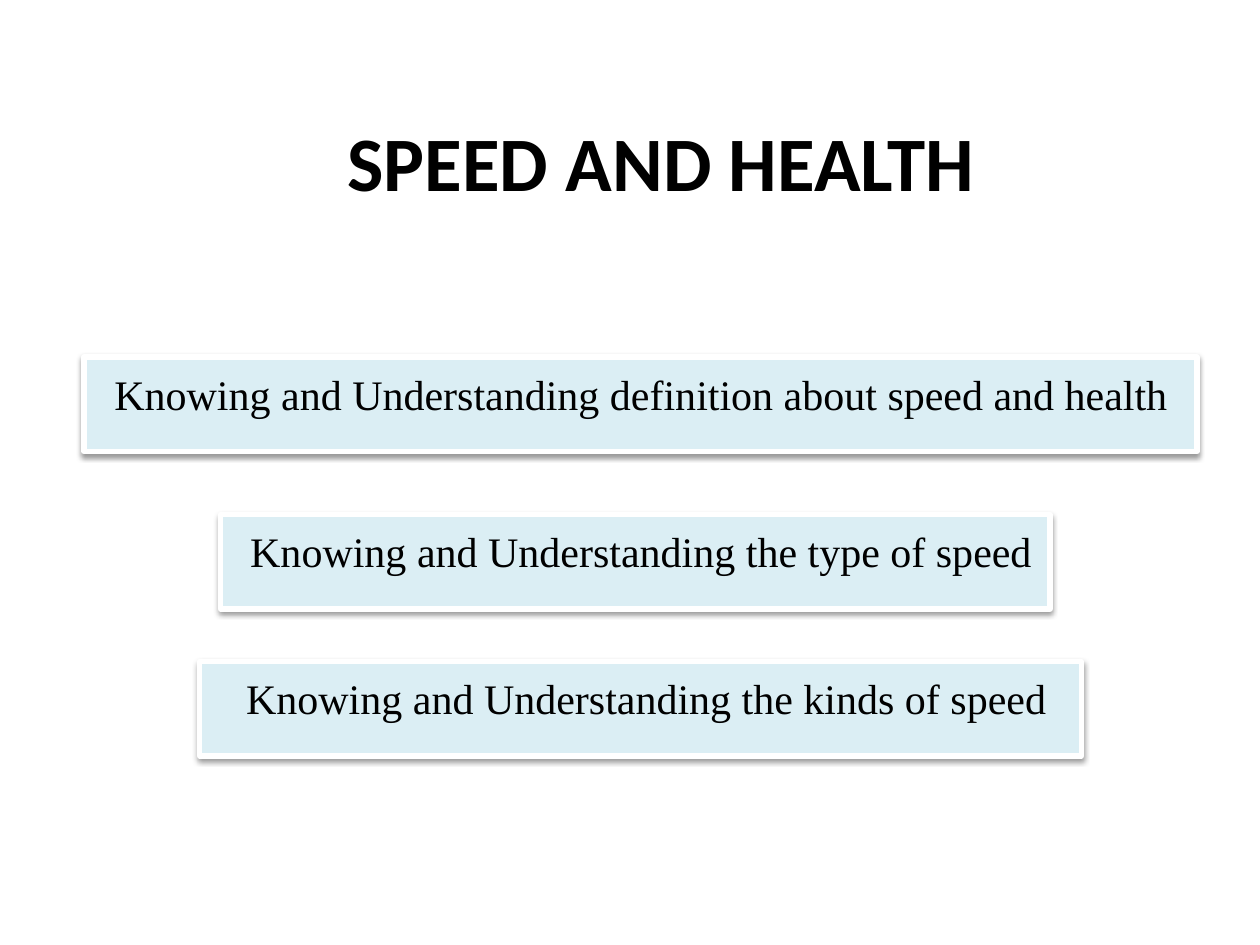
from lxml import etree
from pptx import Presentation
from pptx.dml.color import RGBColor
from pptx.enum.shapes import MSO_SHAPE
from pptx.enum.text import MSO_ANCHOR, PP_ALIGN
from pptx.oxml.ns import qn
from pptx.util import Inches, Pt

RECTANGLE = MSO_SHAPE.RECTANGLE
CENTER = PP_ALIGN.CENTER
TOP, MIDDLE = MSO_ANCHOR.TOP, MSO_ANCHOR.MIDDLE
TITLE_ONLY = 5
COLORS = {"text": "000000", "panel": "DBEEF4", "border": "FFFFFF", "shadow": "000000"}
GOALS = [
    ("Knowing and Understanding definition about speed and health ", (8, 34, 106, 9)),
    ("Knowing and Understanding the type of speed", (21, 49, 79, 9)),
    ("Knowing and Understanding the kinds of speed", (19, 63, 84, 9)),
]


def color(name):
    """Return the named palette colour."""
    return RGBColor.from_string(COLORS[name])


def write_text(shape, text, font, size, bold=False, anchor=MIDDLE, margin=0.05,
               left=0, indent=0):
    """Write one centred paragraph into a shape."""
    frame = shape.text_frame
    frame.word_wrap = True
    frame.vertical_anchor = anchor
    frame.margin_top = Inches(margin)
    paragraph = frame.paragraphs[0]
    paragraph.alignment = CENTER
    properties = paragraph._p.get_or_add_pPr()
    properties.set("marL", str(Inches(left)))
    properties.set("indent", str(Inches(indent)))
    run = paragraph.add_run()
    run.text = text
    run.font.name = font
    run.font.size = Pt(size)
    run.font.bold = bold
    run.font.color.rgb = color("text")


class SlideBuilder:
    """Style and current slide, measured on a grid of 12 cells to the inch."""

    heading_font = "Calibri"
    body_font = "Times New Roman"
    cell = Inches(1) / 12

    def __init__(self, presentation):
        """Add a title-only slide."""
        self.slide = presentation.slides.add_slide(presentation.slide_layouts[TITLE_ONLY])

    def place(self, box):
        """Convert grid cells to lengths."""
        return [round(value * self.cell) for value in box]

    def title(self, text, box):
        """Place and fill the title placeholder."""
        shape = self.slide.shapes.title
        shape.left, shape.top, shape.width, shape.height = self.place(box)
        write_text(shape, text, self.heading_font, 44, bold=True)

    def panel(self, text, box):
        """Add a bordered panel with a soft shadow."""
        shape = self.slide.shapes.add_shape(RECTANGLE, *self.place(box))
        shape.fill.solid()
        shape.fill.fore_color.rgb = color("panel")
        shape.line.color.rgb = color("border")
        shape.line.width = Pt(3)
        self.drop_shadow(shape)
        write_text(shape, text, self.body_font, 24, anchor=TOP, margin=0.09,
                   left=0.4, indent=-0.31)

    def drop_shadow(self, shape):
        """Give a shape a shadow straight below it."""
        shape.shadow.inherit = False
        effects = shape._element.spPr.find(qn("a:effectLst"))
        shadow = etree.SubElement(
            effects, qn("a:outerShdw"), blurRad=str(Pt(3.1)), dist=str(Pt(1.6)),
            dir="5400000", rotWithShape="0")
        tint = etree.SubElement(shadow, qn("a:srgbClr"), val=COLORS["shadow"])
        etree.SubElement(tint, qn("a:alpha"), val="38000")


def main():
    """Build and save the slide."""
    presentation = Presentation()
    presentation.slide_width = Inches(10)
    presentation.slide_height = Inches(7.5)
    builder = SlideBuilder(presentation)
    builder.title("SPEED AND HEALTH", (13.8, 9.6, 98.4, 11.4))
    for text, box in GOALS:
        builder.panel(text, box)
    presentation.save("out.pptx")


if __name__ == "__main__":
    main()
